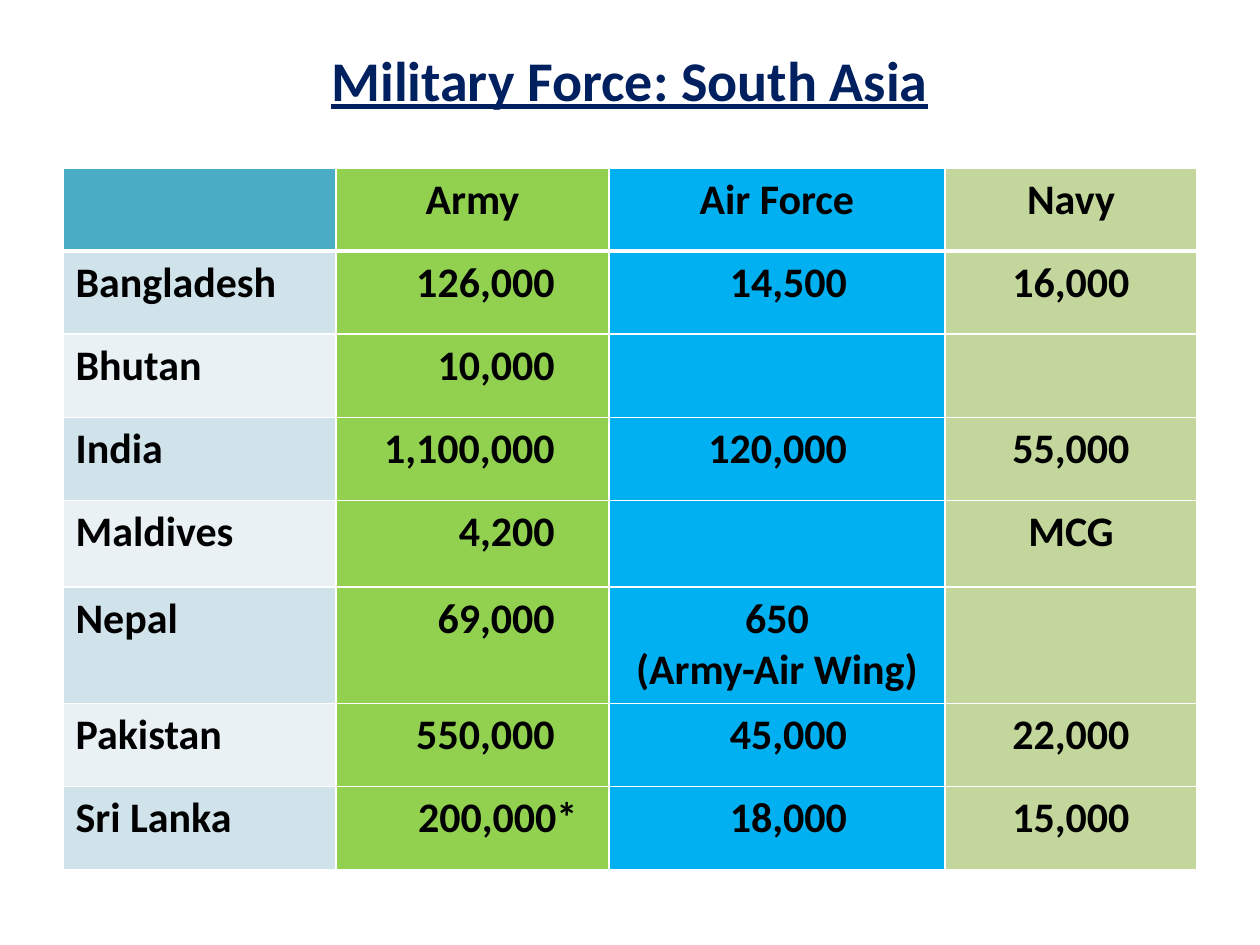
from lxml.etree import SubElement
from pptx import Presentation
from pptx.dml.color import RGBColor
from pptx.enum.text import MSO_ANCHOR as Anchor, PP_ALIGN as Align
from pptx.oxml.ns import qn
from pptx.util import Pt

HEADINGS = ["", "Army", "Air Force", "Navy"]
FORCES = [
    ["Bangladesh", "126,000", "14,500", "16,000"],
    ["Bhutan", "10,000", "", ""],
    ["India", "1,100,000", "120,000", "55,000"],
    ["Maldives", "4,200", "", "MCG"],
    ["Nepal", "69,000", "650\n(Army-Air Wing)", ""],
    ["Pakistan", "550,000", "45,000", "22,000"],
    ["Sri Lanka", "200,000*", "18,000", "15,000"],
]
COLUMN_WIDTHS = [156, 156, 192, 144]
ROW_HEIGHTS = [47.5] * 4 + [49.5, 66.5] + [47.5] * 2
FORCE_FILLS = ["92D050", "00B0F0", "C3D69B"]
COUNTRY_FILLS = ["D0E3EA", "E9F1F5"]
CORNER_FILL = "4BACC6"
NUMBER_MARGINS = {1: 31, 2: 56}  # right margin of the right-aligned columns
ASTERISK_WIDTH = 13


def color(hex_code):
    return RGBColor.from_string(hex_code)


class SlideBuilder:
    font = "Calibri"
    title_color = "002060"
    text_color = "000000"
    border_color = "FFFFFF"

    def __init__(self, slide):
        self.slide = slide

    def format_text(self, frame, size, hex_code, align, underline=None):
        for para in frame.paragraphs:
            para.alignment = align
            for span in para.runs:
                span.font.name = self.font
                span.font.size = Pt(size)
                span.font.bold = True
                span.font.underline = underline
                span.font.color.rgb = color(hex_code)

    def title(self, text, left, top, width, height):
        box = self.slide.shapes.add_textbox(Pt(left), Pt(top), Pt(width), Pt(height))
        frame = box.text_frame
        frame.word_wrap = True
        frame.vertical_anchor = Anchor.MIDDLE
        frame.text = text
        self.format_text(frame, 32, self.title_color, Align.CENTER, underline=True)

    def borders(self, cell, top, bottom):
        """Draw all four cell borders; top and bottom are widths in points."""
        properties = cell._tc.get_or_add_tcPr()
        for side, width in (("L", 1), ("R", 1), ("T", top), ("B", bottom)):
            line = SubElement(properties, qn(f"a:ln{side}"), w=str(Pt(width)))
            fill = SubElement(line, qn("a:solidFill"))
            SubElement(fill, qn("a:srgbClr"), val=self.border_color)

    def cell(self, cell, text, fill, align, top=1, bottom=1):
        self.borders(cell, top, bottom)
        cell.fill.solid()
        cell.fill.fore_color.rgb = color(fill)
        cell.text_frame.text = text
        self.format_text(cell.text_frame, 24, self.text_color, align)

    def force_table(self, left, top):
        rows = [HEADINGS] + FORCES
        frame = self.slide.shapes.add_table(
            len(rows), len(HEADINGS), Pt(left), Pt(top),
            Pt(sum(COLUMN_WIDTHS)), Pt(sum(ROW_HEIGHTS)))
        table = frame.table
        for column, width in zip(table.columns, COLUMN_WIDTHS):
            column.width = Pt(width)
        for row, height in zip(table.rows, ROW_HEIGHTS):
            row.height = Pt(height)

        for r, texts in enumerate(rows):
            country_fill = COUNTRY_FILLS[(r - 1) % 2] if r else CORNER_FILL
            for c, (text, fill) in enumerate(zip(texts, [country_fill] + FORCE_FILLS)):
                cell = table.cell(r, c)
                align = Align.CENTER if c or not r else Align.LEFT
                if r and c in NUMBER_MARGINS and "\n" not in text:
                    align = Align.RIGHT
                    hang = ASTERISK_WIDTH if text.endswith("*") else 0
                    cell.margin_right = Pt(NUMBER_MARGINS[c] - hang)
                self.cell(cell, text, fill, align,
                          top=3 if r == 1 else 1, bottom=3 if r == 0 else 1)


def main():
    deck = Presentation()
    deck.slide_width, deck.slide_height = Pt(720), Pt(540)
    builder = SlideBuilder(deck.slides.add_slide(deck.slide_layouts[6]))
    builder.title("Military Force: South Asia", 36, 12, 648, 66)
    builder.force_table(36, 96)
    deck.save("out.pptx")


if __name__ == "__main__":
    main()
